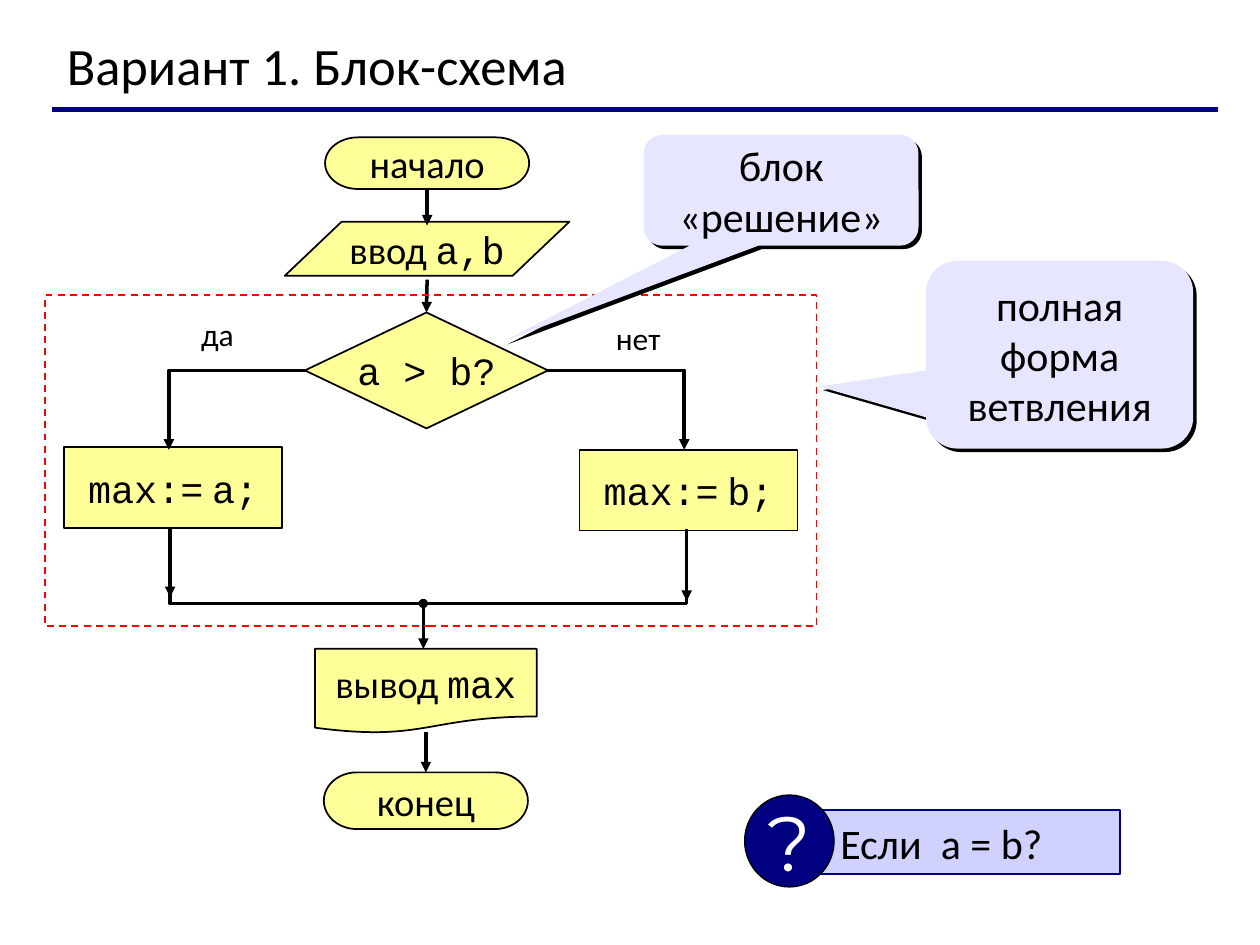
from dataclasses import dataclass

from lxml import etree
from pptx import Presentation
from pptx.dml.color import RGBColor
from pptx.enum.dml import MSO_LINE
from pptx.enum.shapes import MSO_CONNECTOR, MSO_SHAPE
from pptx.enum.text import MSO_ANCHOR, MSO_AUTO_SIZE, PP_ALIGN
from pptx.oxml.ns import qn
from pptx.util import Pt

PX = 9144  # EMU in one px, 100 px to the inch
LINE = MSO_CONNECTOR.STRAIGHT
DASH = MSO_LINE.DASH
MIDDLE = MSO_ANCHOR.MIDDLE
FIXED = MSO_AUTO_SIZE.NONE
LEFT, CENTER = PP_ALIGN.LEFT, PP_ALIGN.CENTER
RECT, OVAL = MSO_SHAPE.RECTANGLE, MSO_SHAPE.OVAL
BUBBLE = MSO_SHAPE.ROUNDED_RECTANGULAR_CALLOUT
PILL = MSO_SHAPE.FLOWCHART_TERMINATOR
DATA = MSO_SHAPE.FLOWCHART_DATA
PAPER = MSO_SHAPE.FLOWCHART_DOCUMENT
CHOICE = MSO_SHAPE.FLOWCHART_DECISION
TOP, BOTTOM = 0, 2


@dataclass(frozen=True)
class Theme:
    body: str = "Calibri"
    code: str = "Courier New"
    sign: str = "Montserrat"
    title: int = 30
    step: int = 22
    label: int = 18
    note: int = 24
    mark: int = 44
    ink: str = "000000"
    white: str = "FFFFFF"
    navy: str = "000080"
    red: str = "FF0000"
    yellow: str = "FFFF99"
    lilac: str = "E6E6FF"
    blue: str = "D1D1FF"


T = Theme()


def apply(item, **values):
    for name, value in values.items():
        setattr(item, name, value)


def area(box, x, y, w, h):
    """Turn px inside a box into EMU on the slide."""
    return (box[0] + x) * PX, (box[1] + y) * PX, w * PX, h * PX


def write(shape, runs, size, color=T.ink, align=CENTER, wrap=True):
    """Fill a shape with one paragraph of (text, font) runs."""
    frame = shape.text_frame
    apply(frame, word_wrap=wrap, auto_size=FIXED, vertical_anchor=MIDDLE)
    para = frame.paragraphs[0]
    apply(para, alignment=align, space_before=Pt(0))
    for text, face in runs:
        run = para.add_run()
        run.text = text
        apply(run.font, name=face, size=Pt(size), bold=False)
        run.font.color.rgb = RGBColor.from_string(color)


def stroke(line, color, width):
    line.color.rgb = RGBColor.from_string(color)
    line.width = Pt(width)


def point(shape):
    """Put a triangle at the end of a line."""
    ln = shape.line._get_or_add_ln()
    etree.SubElement(ln, qn("a:tailEnd"), type="triangle")


def block(slide, kind, place, fill=None, edge=None, width=1):
    shape = slide.shapes.add_shape(kind, *place)
    shape.shadow.inherit = False
    if fill:
        shape.fill.solid()
        shape.fill.fore_color.rgb = RGBColor.from_string(fill)
    else:
        shape.fill.background()
    if edge:
        stroke(shape.line, edge, width)
    else:
        shape.line.fill.background()
    return shape


def rule(slide, box, start, end, color=T.ink, width=2):
    x, y, *_ = area(box, *start, 0, 0)
    u, v, *_ = area(box, *end, 0, 0)
    line = slide.shapes.add_connector(LINE, x, y, u, v)
    stroke(line.line, color, width)
    etree.SubElement(line._element.spPr, qn("a:effectLst"))
    return line


def bend(slide, box, points, arrow):
    """Draw an open line through the points."""
    spots = [(box[0] + x, box[1] + y) for x, y in points]
    maker = slide.shapes.build_freeform(*spots[0], scale=PX)
    maker.add_line_segments(spots[1:], close=False)
    shape = maker.convert_to_shape()
    shape.shadow.inherit = False
    shape.fill.background()
    stroke(shape.line, T.ink, 2)
    if arrow:
        point(shape)


def header(slide, box):
    rule(slide, box, (-2, 66), (924, 66), T.navy, 3)
    title = slide.shapes.title
    left, top, width, height = area(box, 0, 0, *box[2:])
    apply(title, left=left, top=top, width=width, height=height)
    write(title, [("Вариант 1. Блок-схема", T.body)], T.title, align=LEFT)


def flow(slide, box):
    def assign(name):
        return [("max:=", T.code), (" ", T.body), (f"{name};", T.code)]

    steps = {
        "start": (PILL, (207, 0, 162, 41), [("начало", T.body)]),
        "left": (RECT, (0, 246, 173, 64), assign("a")),
        "input": (DATA, (175, 67, 226, 43),
                  [("ввод ", T.body), ("a,b", T.code)]),
        "output": (PAPER, (199, 406, 176, 67),
                   [("вывод ", T.body), ("max", T.code)]),
        "test": (CHOICE, (191, 139, 193, 92), [("a > b?", T.code)]),
        "right": (RECT, (409, 248, 173, 64), assign("b")),
        "end": (PILL, (206, 504, 162, 45), [("конец", T.body)]),
    }
    nodes = {}
    for name, (kind, place, runs) in steps.items():
        nodes[name] = block(slide, kind, area(box, *place), T.yellow, T.ink)
        write(nodes[name], runs, T.step, wrap=False)

    arrows = [
        (288, 41, 70, "start", None),
        (288, 113, 142, None, "test"),
        (287, 472, 507, None, "end"),
        (84, 330, 365, None, None),
        (494, 332, 368, None, None),
        (285, 371, 406, None, None),
    ]
    for x, top, low, source, target in arrows:
        line = rule(slide, box, (x, top), (x, low))
        point(line)
        if source:
            line.begin_connect(nodes[source], BOTTOM)
        if target:
            line.end_connect(nodes[target], TOP)

    bend(slide, box, [(383, 185), (492, 185), (492, 248)], True)
    bend(slide, box, [(192, 185), (83, 185), (83, 248)], True)
    bend(slide, box, [(84, 310), (84, 370), (494, 370), (494, 311)], False)
    block(slide, OVAL, area(box, 282, 367, 6, 6), T.ink, T.ink)

    for text, x, y in [("да", 84, 136), ("нет", 418, 139)]:
        label = slide.shapes.add_textbox(*area(box, x, y, 75, 40))
        write(label, [(text, T.body)], T.label)


def frame(slide, box):
    edge = block(slide, RECT, area(box, 0, 0, *box[2:]), edge=T.red)
    edge.line.dash_style = DASH


def callout(slide, box, text, tip):
    """Place a bubble whose tip is a share of its size from its centre."""
    shape = block(slide, BUBBLE, area(box, 0, 0, *box[2:]), T.lilac)
    for index, value in enumerate((*tip, 0.167)):
        shape.adjustments[index] = value
    effect = shape._element.spPr.find(qn("a:effectLst"))
    shade = etree.SubElement(effect, qn("a:outerShdw"), blurRad="0",
                             dist=str(Pt(2.8)), dir="2700000",
                             algn="ctr", rotWithShape="0")
    etree.SubElement(shade, qn("a:srgbClr"), val=T.ink)
    write(shape, [(text, T.body)], T.note)


def question(slide, box):
    bar = block(slide, RECT, area(box, 51, 12, 247, 51), T.blue, T.navy)
    write(bar, [("Если  a = b?", T.body)], T.note, align=LEFT)
    bar.text_frame.margin_left = 25 * PX
    disc = block(slide, OVAL, area(box, 0, 0, 71, 73), T.navy, T.ink, 0.75)
    write(disc, [("?", T.sign)], T.mark, T.white, wrap=False)


def main():
    deck = Presentation()
    apply(deck, slide_width=1000 * PX, slide_height=750 * PX)
    slide = deck.slides.add_slide(deck.slide_layouts[5])
    header(slide, (43, 21, 890, 60))
    flow(slide, (51, 109, 582, 549))
    frame(slide, (36, 234, 612, 263))
    callout(slide, (735, 207, 212, 149), "полная форма ветвления", (-0.9, 0.17))
    callout(slide, (511, 107, 218, 88), "блок «решение»", (-1.01, 1.36))
    question(slide, (591, 631, 298, 73))
    deck.save("out.pptx")


if __name__ == "__main__":
    main()
